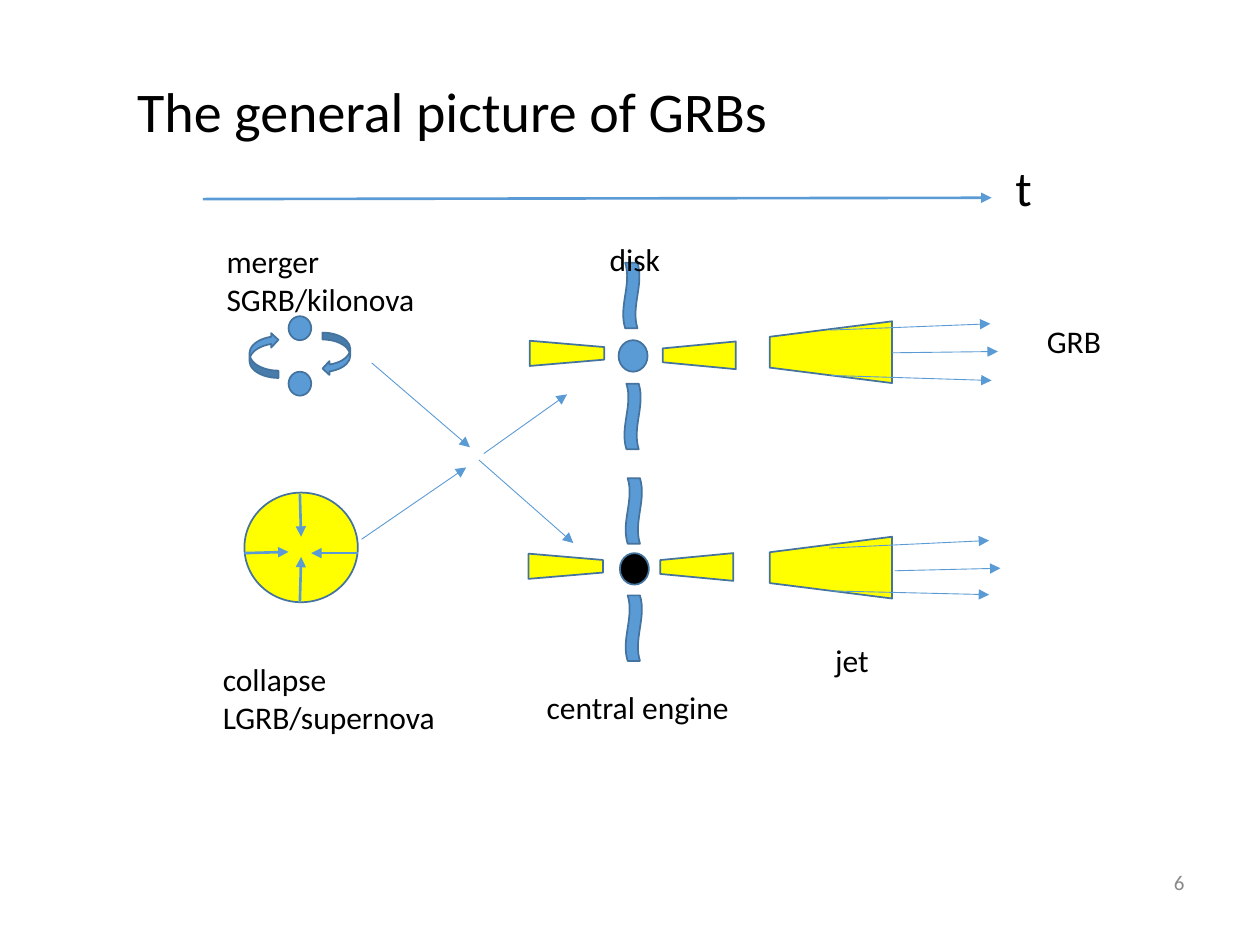
from lxml import etree
from pptx import Presentation
from pptx import util as u
from pptx.dml.color import RGBColor
from pptx.enum import shapes, text
from pptx.oxml import ns

BLUE, OUTLINE, YELLOW, BLACK, GRAY = "5B9BD5", "43739E", "FFFF00", "000000", "898989"
SHAPE = shapes.MSO_SHAPE


def color(value):
    return RGBColor.from_string(value)


class Diagram:
    font = "Calibri"

    def __init__(self, slide):
        self.slide = slide

    def shape(self, kind, box, fill=BLUE, rotation=0, flip=False):
        """Add a filled preset shape, flipped vertically on request."""
        shape = self.slide.shapes.add_shape(kind, *map(u.Inches, box))
        shape.shadow.inherit = False
        shape.fill.solid()
        shape.fill.fore_color.rgb = color(fill)
        shape.line.color.rgb = color(OUTLINE)
        shape.line.width = u.Pt(1)
        shape.rotation = rotation
        if flip:
            shape.element.spPr.xfrm.set("flipV", "1")

    def arrow(self, start, end, width=0.5):
        line = self.slide.shapes.add_connector(
            shapes.MSO_CONNECTOR.STRAIGHT, *map(u.Inches, (*start, *end)))
        line.line.color.rgb = color(BLUE)
        line.line.width = u.Pt(width)
        etree.SubElement(line.line._get_or_add_ln(), ns.qn("a:tailEnd"), type="triangle")
        etree.SubElement(line.element.spPr, ns.qn("a:effectLst"))

    def label(self, words, box, size=18, fill=BLACK, align=text.PP_ALIGN.LEFT):
        frame = self.slide.shapes.add_textbox(*map(u.Inches, box)).text_frame
        frame.word_wrap = True
        paragraph = frame.paragraphs[0]
        paragraph.alignment = align
        run = paragraph.add_run()
        run.text = words
        run.font.name = self.font
        run.font.size = u.Pt(size)
        run.font.color.rgb = color(fill)


def draw_progenitors(diagram):
    for top in (2.95, 2.51):
        diagram.shape(SHAPE.OVAL, (2.29, top, 0.18, 0.19))
    diagram.shape(SHAPE.OVAL, (1.94, 3.91, 0.9, 0.87), YELLOW)
    diagram.shape(SHAPE.CURVED_LEFT_ARROW, (2.56, 2.64, 0.22, 0.34))
    diagram.shape(SHAPE.CURVED_RIGHT_ARROW, (1.98, 2.64, 0.23, 0.36), flip=True)

    infall = [((2.38, 3.92), (2.39, 4.26)), ((1.94, 4.39), (2.29, 4.38)),
              ((2.38, 4.78), (2.39, 4.42)), ((2.84, 4.39), (2.47, 4.39))]
    for start, end in infall:
        diagram.arrow(start, end, 1.5)

    crossing = [((2.95, 2.88), (3.73, 3.55)), ((2.87, 4.28), (3.7, 3.71)),
                ((3.84, 3.6), (4.5, 3.13)), ((3.8, 3.65), (4.55, 4.31))]
    for start, end in crossing:
        diagram.arrow(start, end)


def draw_engines(diagram):
    engines = [((4.91, 2.7), BLUE, ((4.75, 2.28), (4.76, 3.24))),
               ((4.92, 4.39), BLACK, ((4.77, 3.99), (4.77, 4.92)))]
    for core, fill, waves in engines:
        diagram.shape(SHAPE.OVAL, (*core, 0.23, 0.25), fill)
        for wave in waves:
            diagram.shape(SHAPE.WAVE, (*wave, 0.52, 0.13), rotation=90)

    disks_and_jets = [(5.42, 4.21, 0.22, 0.58), (6.35, 4.02, 0.49, 0.97),
                      (4.39, 4.2, 0.2, 0.59), (4.4, 2.51, 0.2, 0.59),
                      (5.44, 2.53, 0.22, 0.58), (6.35, 2.31, 0.49, 0.97)]
    for box in disks_and_jets:
        left_of_core = box[0] < 4.9
        diagram.shape(SHAPE.TRAPEZOID, box, YELLOW, 270, left_of_core)

    emission = [((6.59, 2.62), (7.86, 2.57)), ((6.6, 2.98), (7.87, 3.02)),
                ((7.08, 2.8), (7.92, 2.79)), ((6.58, 4.35), (7.85, 4.29)),
                ((6.59, 4.69), (7.85, 4.72)), ((7.1, 4.53), (7.94, 4.51))]
    for start, end in emission:
        diagram.arrow(start, end)


def draw_labels(diagram):
    labels = [("merger SGRB/kilonova", (1.7, 1.87, 1.94, 0.71)),
              ("collapse LGRB/supernova", (1.67, 5.19, 2.01, 0.71)),
              ("central engine", (4.24, 5.41, 1.96, 0.4)),
              ("jet", (6.53, 5.04, 0.96, 0.33)),
              ("GRB", (8.21, 2.51, 0.82, 0.33)),
              ("disk", (4.74, 1.86, 0.77, 0.33))]
    for words, box in labels:
        diagram.label(words, box)
    diagram.label("6", (7.5, 6.85, 2, 0.5), 12, GRAY, text.PP_ALIGN.RIGHT)
    diagram.arrow((1.61, 1.58), (7.87, 1.57), 1.5)
    diagram.label("t", (7.96, 1.2, 0.67, 0.57), 28)
    diagram.label("The general picture of GRBs", (0.99, 0.56, 5.24, 0.64), 32)


def main():
    presentation = Presentation()
    presentation.slide_width = u.Inches(10)
    presentation.slide_height = u.Inches(7.5)
    slide = presentation.slides.add_slide(presentation.slide_layouts[6])
    diagram = Diagram(slide)
    draw_progenitors(diagram)
    draw_engines(diagram)
    draw_labels(diagram)
    presentation.save("out.pptx")


if __name__ == "__main__":
    main()
